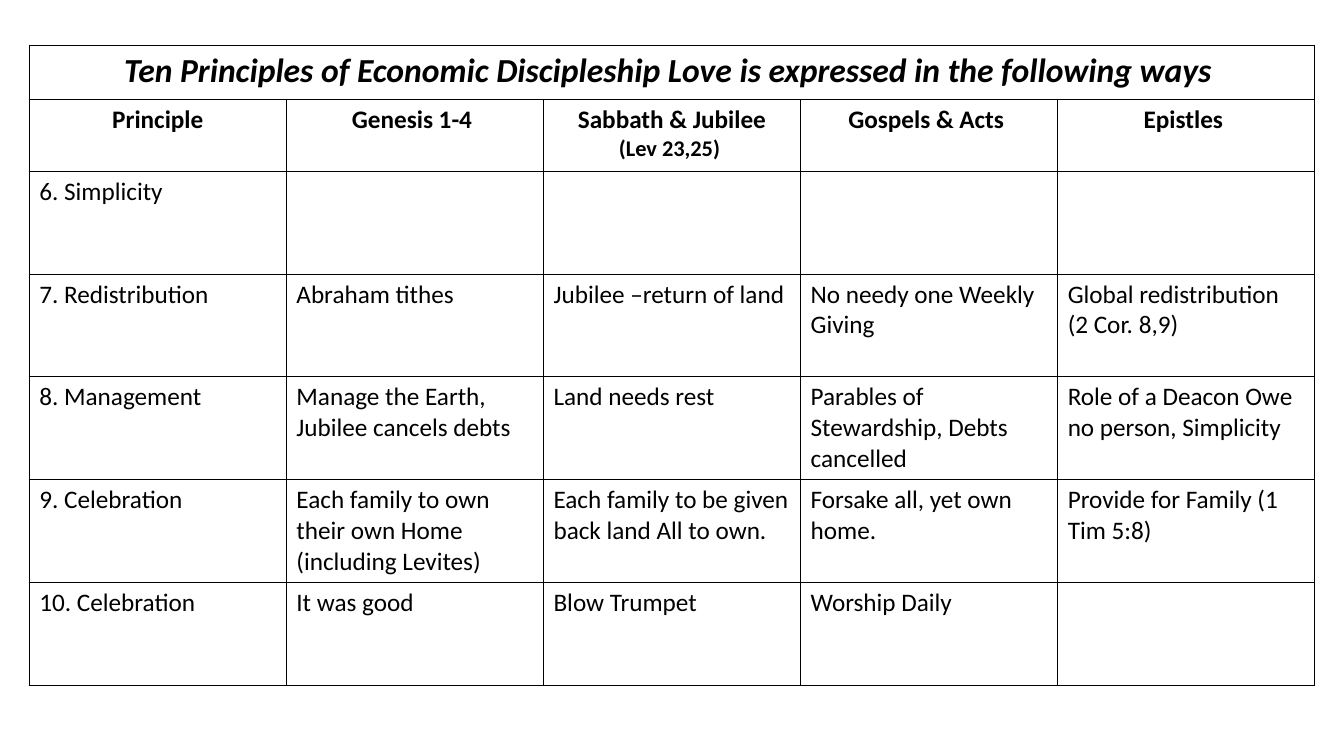
from dataclasses import dataclass

from lxml import etree
from pptx import Presentation
from pptx.dml.color import RGBColor
from pptx.enum.text import PP_ALIGN
from pptx.oxml.ns import qn
from pptx.util import Inches, Pt

BLACK = RGBColor(0x00, 0x00, 0x00)
CENTER, LEFT = PP_ALIGN.CENTER, PP_ALIGN.LEFT
FONT = "Calibri"
COLUMNS = 5
COL_WIDTH = 2.55
BODY_HEIGHT = 1.02
BORDER_WIDTH = Pt(1)


@dataclass
class Row:
    """A table row; a second line in a cell is set in note_size."""
    cells: list[str]
    height: float = BODY_HEIGHT
    size: int = 18
    note_size: int = 16
    bold: bool = False
    italic: bool = False
    align: PP_ALIGN = LEFT


ROWS = [
    Row(["Ten Principles of Economic Discipleship Love is expressed in the following ways "],
        height=0.54, size=24, bold=True, italic=True, align=CENTER),
    Row(["Principle", "Genesis 1-4 ", "Sabbath & Jubilee\n(Lev 23,25) ",
         "Gospels & Acts ", "Epistles "],
        height=0.71, bold=True, align=CENTER),
    Row(["6. Simplicity"]),
    Row(["7. Redistribution", "Abraham tithes", "Jubilee –return of land",
         "No needy one Weekly Giving", "Global redistribution (2 Cor. 8,9)"]),
    Row(["8. Management", "Manage the Earth, Jubilee cancels debts", "Land needs rest",
         "Parables of Stewardship, Debts cancelled",
         "Role of a Deacon Owe no person, Simplicity"]),
    Row(["9. Celebration", "Each family to own their own Home (including Levites)",
         "Each family to be given back land All to own.",
         "Forsake all, yet own home.", "Provide for Family (1 Tim 5:8)"]),
    Row(["10. Celebration", "It was good", "Blow Trumpet", "Worship Daily"]),
]


def add_borders(cell) -> None:
    tcPr = cell._tc.get_or_add_tcPr()
    for i, side in enumerate(("a:lnL", "a:lnR", "a:lnT", "a:lnB")):
        ln = etree.Element(qn(side), w=str(BORDER_WIDTH))
        fill = etree.SubElement(ln, qn("a:solidFill"))
        etree.SubElement(fill, qn("a:srgbClr"), val=str(BLACK))
        tcPr.insert(i, ln)


def write_cell(cell, text: str, row: Row) -> None:
    cell.text_frame.text = text
    for i, p in enumerate(cell.text_frame.paragraphs):
        p.alignment = row.align
        p.font.size = Pt(row.note_size if i else row.size)
        for r in p.runs:
            r.font.name = FONT
            r.font.size = p.font.size
            r.font.bold = row.bold
            r.font.italic = row.italic
            r.font.color.rgb = BLACK


def add_principles_table(s, rows: list[Row]) -> None:
    height = sum(row.height for row in rows)
    table = s.shapes.add_table(len(rows), COLUMNS, Inches(0.29), Inches(0.45),
                               Inches(COLUMNS * COL_WIDTH), Inches(height)).table
    table.first_row = table.horz_banding = False
    for column in table.columns:
        column.width = Inches(COL_WIDTH)
    for i, row in enumerate(rows):
        table.rows[i].height = Inches(row.height)
        for j in range(COLUMNS):
            cell = table.cell(i, j)
            cell.fill.background()
            add_borders(cell)
            if j < len(row.cells):
                write_cell(cell, row.cells[j], row)
    table.cell(0, 0).merge(table.cell(0, COLUMNS - 1))


def main() -> None:
    prs = Presentation()
    prs.slide_width, prs.slide_height = Inches(13.33), Inches(7.5)
    s = prs.slides.add_slide(prs.slide_layouts[6])
    add_principles_table(s, ROWS)
    prs.save("out.pptx")


if __name__ == "__main__":
    main()
